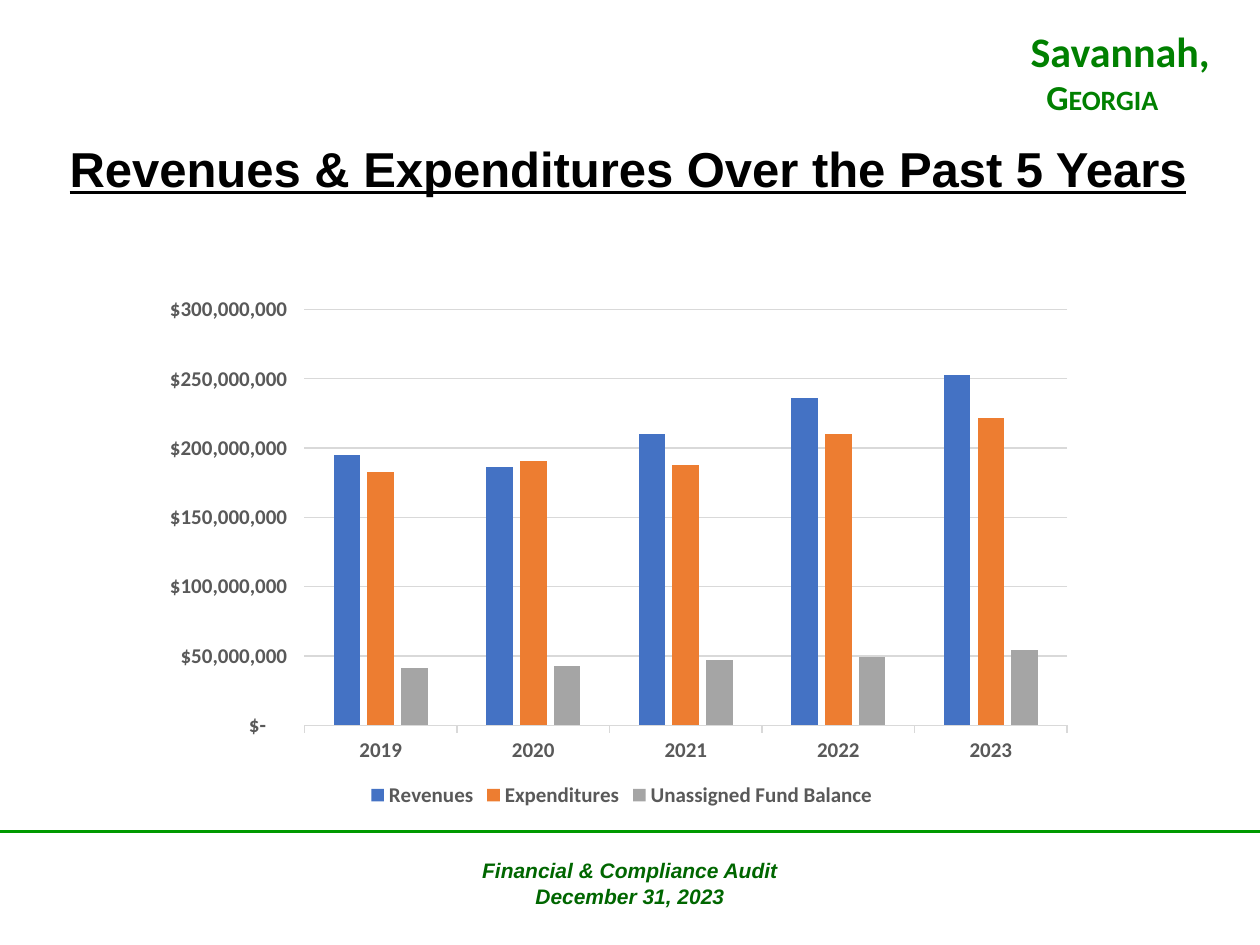
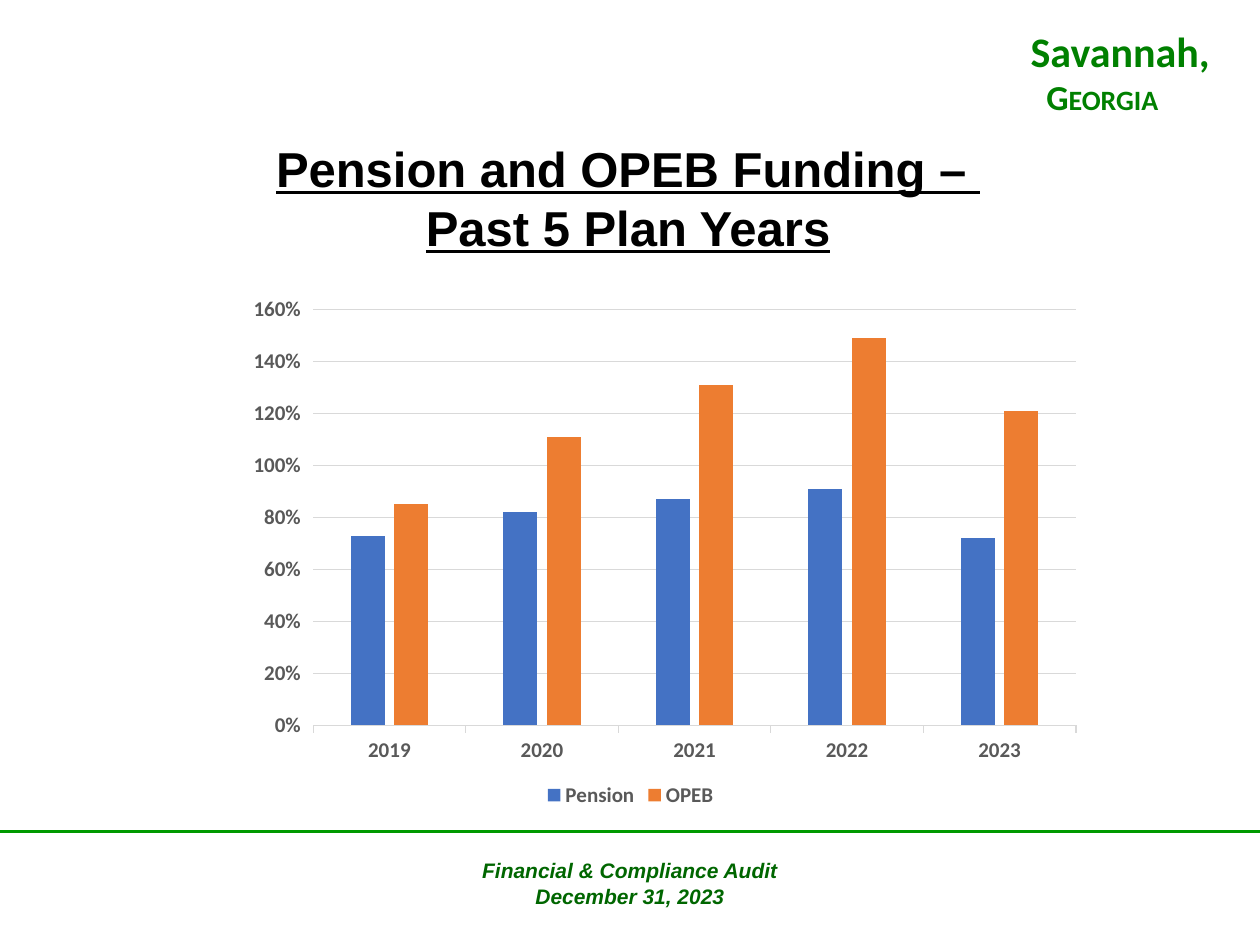
from dataclasses import dataclass

from lxml import etree
from pptx import Presentation
from pptx.chart.data import CategoryChartData
from pptx.dml.color import RGBColor
from pptx.enum.chart import XL_CHART_TYPE as ChartType
from pptx.enum.chart import XL_LEGEND_POSITION as LegendPos
from pptx.enum.chart import XL_TICK_MARK as Tick
from pptx.enum.shapes import MSO_CONNECTOR as Connector
from pptx.enum.text import MSO_AUTO_SIZE as AutoSize
from pptx.enum.text import PP_ALIGN as Align
from pptx.oxml import parse_xml
from pptx.oxml.ns import nsdecls, qn
from pptx.util import Pt

WHITE = RGBColor(0xFF, 0xFF, 0xFF)
BLACK = RGBColor(0x00, 0x00, 0x00)
RULE_GREEN = RGBColor(0x00, 0x99, 0x00)
CITY_GREEN = RGBColor(0x00, 0x80, 0x00)
FOOTER_GREEN = RGBColor(0x00, 0x66, 0x00)
AXIS_TEXT = RGBColor(0x59, 0x59, 0x59)
GRID = RGBColor(0xD9, 0xD9, 0xD9)
SERIES_COLORS = (
    RGBColor(0x44, 0x72, 0xC4),
    RGBColor(0xED, 0x7D, 0x31),
    RGBColor(0xA5, 0xA5, 0xA5),
)

SLIDE_W, SLIDE_H = Pt(720), Pt(540)
RULE_Y = Pt(475.2)
YEARS = ("2019", "2020", "2021", "2022", "2023")
PLOT_AREA = {"x": 0.16, "y": 0.147, "w": 0.817, "h": 0.705}
DOLLARS = r'_("$"* #,##0_);_("$"* \(#,##0\);_("$"* "-"??_);_(@_)'


@dataclass(frozen=True)
class Box:
    left: float
    top: float
    width: float
    height: float

    def lengths(self) -> tuple:
        return tuple(Pt(v) for v in (self.left, self.top, self.width, self.height))


@dataclass(frozen=True)
class Run:
    text: str
    size: float
    small_caps: bool = False


@dataclass(frozen=True)
class ChartSlide:
    title: tuple[str, ...]
    chart_left: float
    series: dict[str, tuple[float, ...]]
    number_format: str
    axis_max: float
    axis_step: float


SLIDES = (
    ChartSlide(
        ("Revenues & Expenditures Over the Past 5 Years",),
        88.6,
        {
            "Revenues": (195e6, 186e6, 210e6, 236e6, 253e6),
            "Expenditures": (183e6, 191e6, 188e6, 210e6, 222e6),
            "Unassigned Fund Balance": (41e6, 43e6, 47e6, 49e6, 54e6),
        },
        DOLLARS,
        300e6,
        50e6,
    ),
    ChartSlide(
        ("Pension and OPEB Funding – ", "Past 5 Plan Years"),
        93.6,
        {
            "Pension": (0.73, 0.82, 0.87, 0.91, 0.72),
            "OPEB": (0.85, 1.11, 1.31, 1.49, 1.21),
        },
        "0%",
        1.6,
        0.2,
    ),
)


def set_font(font, name: str, size: float, color: RGBColor, bold: bool = True) -> None:
    font.name, font.size, font.bold = name, Pt(size), bold
    font.color.rgb = color


def add_text(s, box: Box, lines: list[list[Run]], *, font: str, color: RGBColor,
             align: Align = Align.CENTER, wrap: bool = True, italic: bool = False,
             underline: bool = False, last_indent: float = 0) -> None:
    tf = s.shapes.add_textbox(*box.lengths()).text_frame
    tf.word_wrap = wrap
    tf.auto_size = AutoSize.SHAPE_TO_FIT_TEXT
    for i, line in enumerate(lines):
        p = tf.add_paragraph() if i else tf.paragraphs[0]
        p.alignment = align
        for run in line:
            r = p.add_run()
            r.text = run.text
            set_font(r.font, font, run.size, color)
            r.font.italic, r.font.underline = italic, underline
            if run.small_caps:
                r.font._element.set("cap", "small")
    if last_indent:
        p._p.get_or_add_pPr().set("marL", str(Pt(last_indent)))


def add_frame(s) -> None:
    s.background.fill.solid()
    s.background.fill.fore_color.rgb = WHITE
    rule = s.shapes.add_connector(Connector.STRAIGHT, 0, RULE_Y, SLIDE_W, RULE_Y)
    rule.line.color.rgb = RULE_GREEN
    rule.line.width = Pt(2)
    etree.SubElement(rule._element.spPr, qn("a:effectLst"))
    add_text(s, Box(581.8, 10.8, 135.4, 60.5),
             [[Run("Savannah,", 24)], [Run("G", 20), Run("eorgia", 20, small_caps=True)]],
             font="Calibri", color=CITY_GREEN, align=Align.LEFT, wrap=False, last_indent=9)
    add_text(s, Box(0, 486.7, 720, 36),
             [[Run("Financial & Compliance Audit", 12)], [Run("December 31, 2023", 12)]],
             font="Arial", color=FOOTER_GREEN, italic=True)


def fix_plot_area(chart) -> None:
    plot_area = chart._chartSpace.chart.plotArea
    for old in plot_area.findall(qn("c:layout")):
        plot_area.remove(old)
    sizes = "".join(f'<c:{k} val="{v}"/>' for k, v in PLOT_AREA.items())
    plot_area.insert(0, parse_xml(
        f'<c:layout {nsdecls("c")}><c:manualLayout><c:layoutTarget val="inner"/>'
        f'<c:xMode val="edge"/><c:yMode val="edge"/>{sizes}</c:manualLayout></c:layout>'))


def add_column_chart(s, content: ChartSlide) -> None:
    data = CategoryChartData(number_format=content.number_format)
    data.categories = YEARS
    for name, values in content.series.items():
        data.add_series(name, values)
    box = Box(content.chart_left, 127.4, 533.5, 337)
    chart = s.shapes.add_chart(ChartType.COLUMN_CLUSTERED, *box.lengths(), data).chart
    set_font(chart.font, "Calibri", 10, BLACK, bold=False)
    chart.has_title = False
    chart.has_legend = True
    chart.legend.position = LegendPos.BOTTOM
    chart.legend.include_in_layout = False
    set_font(chart.legend.font, "Calibri", 12, AXIS_TEXT)

    plot = chart.plots[0]
    plot.gap_width, plot.overlap, plot.vary_by_categories = 219, -27, False
    for series, color in zip(plot.series, SERIES_COLORS):
        series.format.fill.solid()
        series.format.fill.fore_color.rgb = color
        series.invert_if_negative = False

    cat_axis, val_axis = chart.category_axis, chart.value_axis
    for axis in (cat_axis, val_axis):
        axis.major_tick_mark = Tick.OUTSIDE
        set_font(axis.tick_labels.font, "Calibri", 12, AXIS_TEXT)
    val_axis.minimum_scale, val_axis.maximum_scale = 0, content.axis_max
    val_axis.major_unit = content.axis_step
    val_axis.tick_labels.number_format = content.number_format
    val_axis.tick_labels.number_format_is_linked = False
    val_axis.format.line.fill.background()
    for line in (cat_axis.format.line, val_axis.major_gridlines.format.line):
        line.color.rgb = GRID
        line.width = Pt(0.75)
    fix_plot_area(chart)


def main() -> None:
    prs = Presentation()
    prs.slide_width, prs.slide_height = SLIDE_W, SLIDE_H
    for content in SLIDES:
        s = prs.slides.add_slide(prs.slide_layouts[6])
        add_frame(s)
        add_text(s, Box(5, 75.6, 707.8, 7.2 + 33.8 * len(content.title)),
                 [[Run(line, 28)] for line in content.title],
                 font="Arial", color=BLACK, underline=True)
        add_column_chart(s, content)
    prs.save("out.pptx")


if __name__ == "__main__":
    main()
